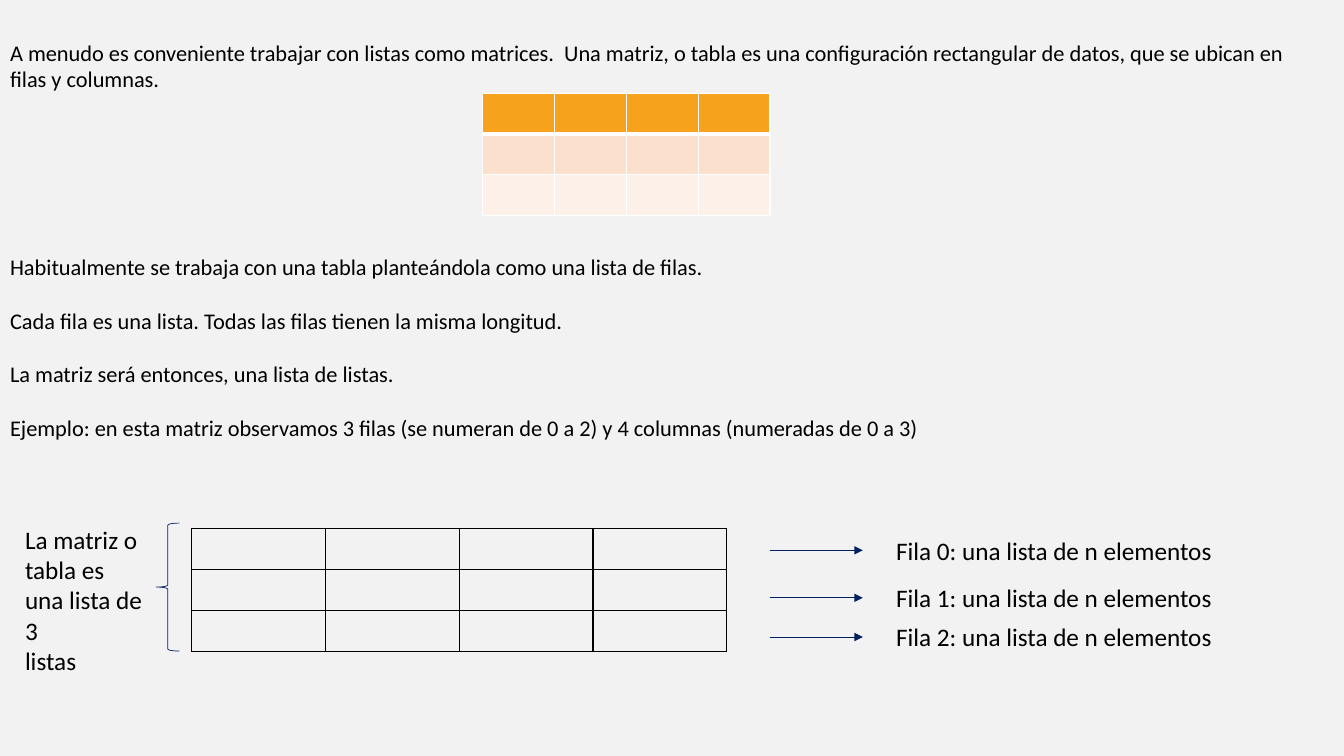
from pptx import Presentation
from pptx.dml.color import RGBColor as Rgb
from pptx.enum.shapes import MSO_CONNECTOR as Conn, MSO_SHAPE as Kind
from pptx.enum.text import MSO_ANCHOR as Anchor, MSO_AUTO_SIZE as Fit
from pptx.oxml import parse_xml
from pptx.oxml.ns import nsdecls
from pptx.util import Pt
from lxml.etree import SubElement as Sub

HUES = {"back": "F2F2F2", "ink": "000000", "navy": "002060", "white": "FFFFFF",
        "head": "F6A21D", "band": "FBE0CD", "pale": "FDF0E8"}
FONT = "Calibri"
NS = "{http://schemas.openxmlformats.org/drawingml/2006/main}"


def hue(name):
    return Rgb.from_string(HUES[name])


class Page:
    """Holds the style and the current slide, and draws each kind of element."""

    def __init__(self, deck):
        self.slide = deck.slides.add_slide(deck.slide_layouts[1])
        self.shapes = self.slide.shapes
        fill = self.slide.background.fill
        fill.solid()
        fill.fore_color.rgb = hue("back")
        title = self.shapes.title
        title._element.getparent().remove(title._element)

    def put(self, frame, lines, size, gaps=()):
        frame.word_wrap = True
        frame.auto_size = Fit.NONE
        frame.vertical_anchor = Anchor.TOP
        for i, line in enumerate(lines):
            para = frame.paragraphs[0] if i == 0 else frame.add_paragraph()
            para.space_before = Pt(gaps[i] if gaps else 0)
            run = para.add_run()
            run.text = line
            run.font.size = Pt(size)
            run.font.name = FONT
            run.font.color.rgb = hue("ink")

    def body(self, box, lines, size, gaps):
        hold = self.slide.placeholders[1]
        hold.left, hold.top, hold.width, hold.height = map(Pt, box)
        self.put(hold.text_frame, lines, size, gaps)
        for para in hold.text_frame.paragraphs:
            props = para._p.get_or_add_pPr()
            props.set("marL", "0")
            props.set("indent", "0")
            Sub(props, NS + "buNone")

    def text(self, box, lines, size=18):
        self.put(self.shapes.add_textbox(*map(Pt, box)).text_frame, lines, size)

    def edge(self, cell, line, thick):
        props = cell._tc.get_or_add_tcPr()
        for i, side in enumerate("LRTB"):
            wide = Pt(thick.get(side, 1))
            props.insert(i, parse_xml(
                f'<a:ln{side} {nsdecls("a")} w="{wide}"><a:solidFill>'
                f'<a:srgbClr val="{HUES[line]}"/></a:solidFill></a:ln{side}>'))

    def table(self, left, top, wide, high, line, fills, thick):
        rows, cols = len(fills), 4
        grid = self.shapes.add_table(rows, cols, Pt(left), Pt(top),
                                     Pt(wide * cols), Pt(high * rows)).table
        grid.first_row = grid.horz_banding = False
        for col in grid.columns:
            col.width = Pt(wide)
        for row, fill, rule in zip(grid.rows, fills, thick):
            row.height = Pt(high)
            for cell in row.cells:
                if fill:
                    cell.fill.solid()
                    cell.fill.fore_color.rgb = hue(fill)
                else:
                    cell.fill.background()
                self.edge(cell, line, rule)

    def stroke(self, item):
        item.line.color.rgb = hue("navy")
        item.line.width = Pt(0.5)

    def arrow(self, left, right, y):
        link = self.shapes.add_connector(Conn.STRAIGHT, Pt(left), Pt(y), Pt(right), Pt(y))
        self.stroke(link)
        props = link._element.spPr
        Sub(props.get_or_add_ln(), NS + "tailEnd", type="triangle")
        Sub(props, NS + "effectLst")

    def brace(self, box):
        item = self.shapes.add_shape(Kind.LEFT_BRACE, *map(Pt, box))
        item.shadow.inherit = False
        item.fill.background()
        self.stroke(item)


def main():
    deck = Presentation()
    deck.slide_width, deck.slide_height = Pt(960), Pt(540)
    page = Page(deck)
    page.body((0, 24, 942, 453), [
        "A menudo es conveniente trabajar con listas como matrices.  Una matriz, o tabla es "
        "una configuración rectangular de datos, que se ubican en filas y columnas.",
        "Habitualmente se trabaja con una tabla planteándola como una lista de filas.",
        "Cada fila es una lista. Todas las filas tienen la misma longitud.",
        "La matriz será entonces, una lista de listas.",
        "Ejemplo: en esta matriz observamos 3 filas (se numeran de 0 a 2) y 4 columnas "
        "(numeradas de 0 a 3)",
    ], 16, (0, 115, 19, 19, 19))
    page.table(344.9, 66.5, 51.3, 28.9, "white", ("head", "band", "pale"),
               ({"B": 3}, {"T": 3}, {}))
    page.table(136.8, 377.4, 95.6, 29.3, "ink", (None,) * 3, ({},) * 3)
    for i, y in enumerate((393.1, 427, 455)):
        page.text((633, y - 14.4, 273.6, 28.8), [f"Fila {i}: una lista de n elementos"])
        page.arrow(550, 616.3, y)
    page.text((10.8, 370.8, 100, 94.3), ["La matriz o tabla es una lista de 3", "listas"])
    page.brace((111.6, 373.7, 16.6, 91.4))
    deck.save("out.pptx")


if __name__ == "__main__":
    main()
